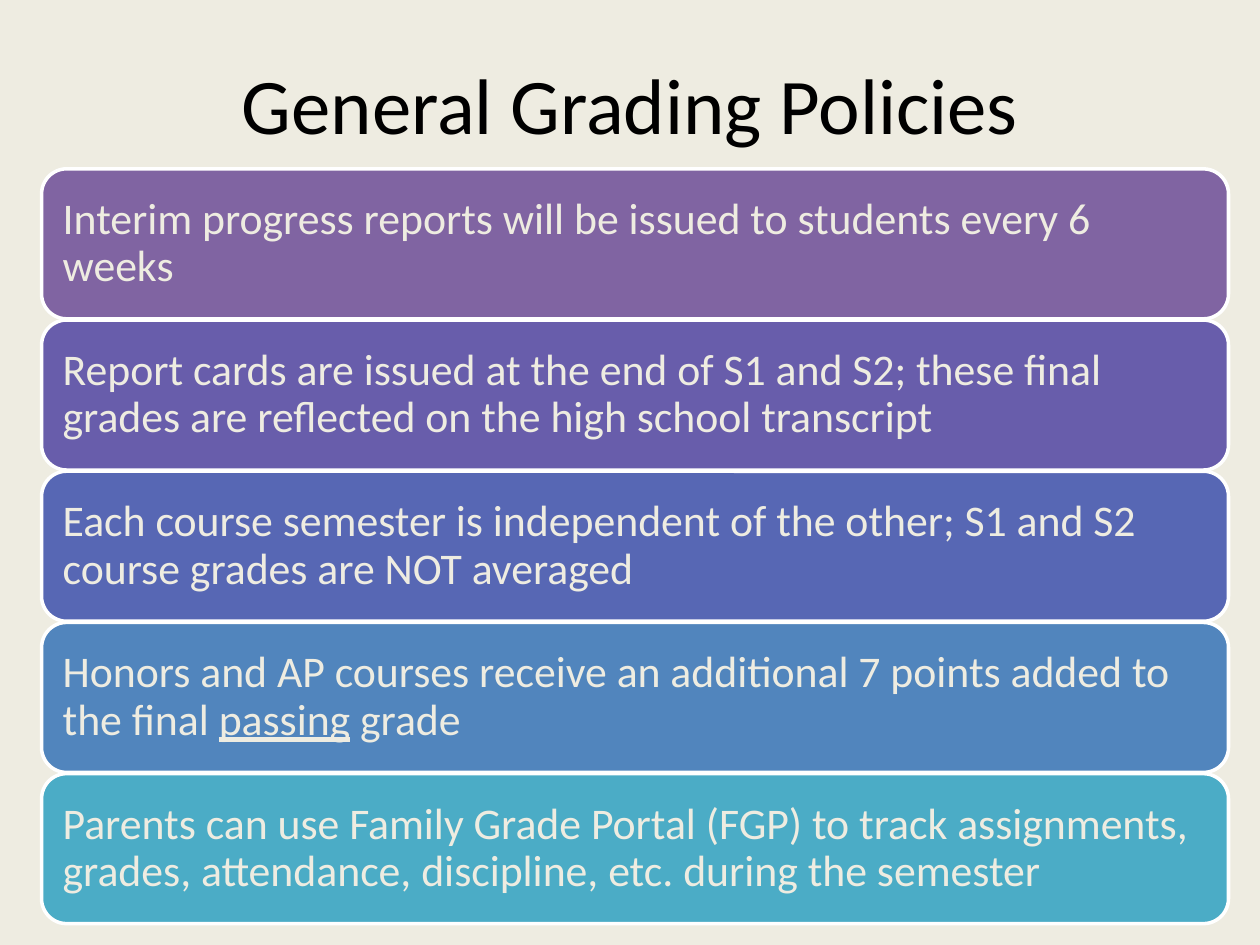
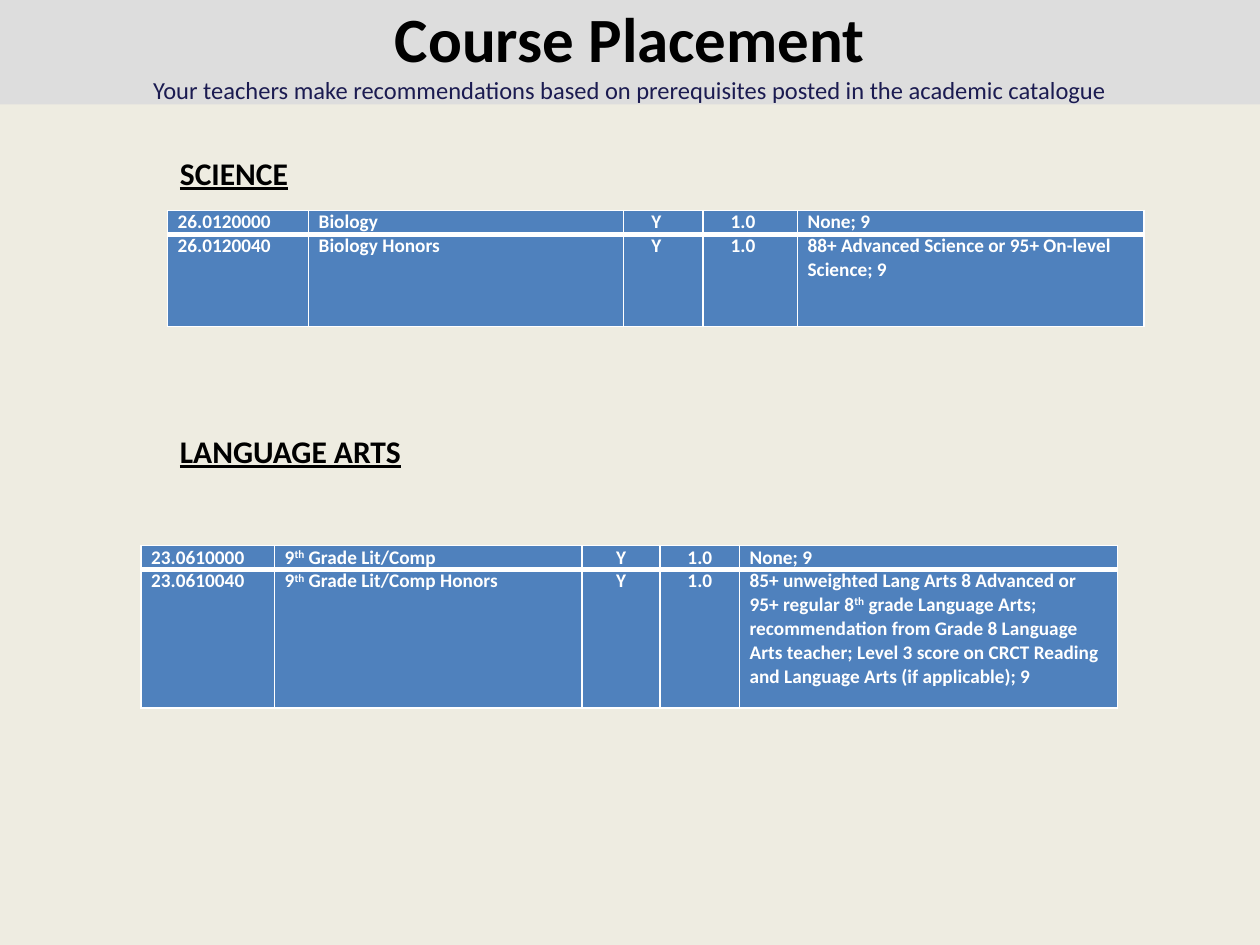
from lxml import etree
from pptx import Presentation
from pptx import util as u
from pptx.dml.color import RGBColor
from pptx.enum import shapes, text
from pptx.oxml.ns import qn

FONT = "Calibri"
HUES = {
    "paper": "EEECE1", "ink": "000000", "white": "FFFFFF", "band": "DDDDDD",
    "navy": "1B1B51", "cell": "4F81BD",
}
BARS = [
    ("8064A2", "Interim progress reports will be issued to students every 6 weeks"),
    ("685DAB", "Report cards are issued at the end of S1 and S2; these final grades "
               "are reflected on the high school transcript"),
    ("5767B4", "Each course semester is independent of the other; S1 and S2 course "
               "grades are NOT averaged"),
    ("5185BD", "Honors and AP courses receive an additional 7 points added to the "
               "final |passing| grade"),
    ("4BACC6", "Parents can use Family Grade Portal (FGP) to track assignments, "
               "grades, attendance, discipline, etc. during the semester"),
]
SCIENCE = [
    ["26.0120000", "Biology", "Y", "1.0", "None; 9"],
    ["26.0120040", "Biology Honors", "Y", "1.0",
     "88+ Advanced Science or 95+ On-level Science; 9"],
]
ARTS = [
    ["23.0610000", "9|th| Grade Lit/Comp", "Y", "1.0", "None; 9"],
    ["23.0610040", "9|th| Grade Lit/Comp Honors", "Y", "1.0",
     "85+ unweighted Lang Arts 8 Advanced or 95+ regular 8|th| grade Language "
     "Arts; recommendation from Grade 8 Language Arts teacher; Level 3 score on "
     "CRCT Reading and Language Arts (if applicable); 9"],
]


def inches(*sizes):
    return [u.Inches(size) for size in sizes]


def tint(name):
    return RGBColor.from_string(HUES.get(name, name))


def paint(fill, name):
    fill.solid()
    fill.fore_color.rgb = tint(name)


def under(run):
    run.font.underline = True


def lift(run):
    run.font._element.set("baseline", "30000")


def write(para, words, size, hue, bold=False, align="LEFT", mark=None):
    for i, part in enumerate(words.split("|")):
        run = para.add_run()
        run.text = part
        if i % 2:
            mark(run)
    font = para.font
    font.name, font.size, font.bold = FONT, u.Pt(size), bold
    font.color.rgb = tint(hue)
    para.alignment = getattr(text.PP_ALIGN, align)


def add_slide(deck):
    slide = deck.slides.add_slide(deck.slide_layouts[6])
    paint(slide.background.fill, "paper")
    return slide


def add_label(slide, box, words, size, wrap=True, **style):
    frame = slide.shapes.add_textbox(*inches(*box)).text_frame
    frame.word_wrap = wrap
    write(frame.paragraphs[0], words, size, "ink", **style)
    return frame


def add_block(slide, kind, box, hue):
    block = slide.shapes.add_shape(kind, *inches(*box))
    block.shadow.inherit = False
    paint(block.fill, hue)
    block.line.fill.background()
    block.text_frame.vertical_anchor = text.MSO_ANCHOR.MIDDLE
    return block


def add_bars(slide, box, bars, gap=0.01):
    left, top, width, height = box
    step = (height + gap) / len(bars)
    for i, (hue, words) in enumerate(bars):
        bar = add_block(slide, shapes.MSO_SHAPE.ROUNDED_RECTANGLE,
                        (left, top + i * step, width, step - gap), hue)
        paint(bar.line.fill, "white")
        bar.line.width = u.Pt(2)
        frame = bar.text_frame
        frame.word_wrap = True
        frame.margin_left = frame.margin_right = u.Inches(0.11)
        frame.margin_top = frame.margin_bottom = u.Inches(0.1)
        para = frame.paragraphs[0]
        para.line_spacing = 0.9
        write(para, words, 25, "paper", mark=under)


def add_header(slide, box, title, note):
    band = add_block(slide, shapes.MSO_SHAPE.RECTANGLE, box, "band")
    frame = band.text_frame
    frame.word_wrap = False
    write(frame.paragraphs[0], title, 36, "ink", bold=True, align="CENTER")
    write(frame.add_paragraph(), note, 14, "navy", align="CENTER")


def add_edges(cell, widths):
    props = cell._tc.get_or_add_tcPr()
    for i, (side, width) in enumerate(widths.items()):
        line = etree.Element(qn("a:ln" + side), w=str(u.Pt(width)))
        fill = etree.SubElement(line, qn("a:solidFill"))
        etree.SubElement(fill, qn("a:srgbClr"), val=HUES["white"])
        props.insert(i, line)


def add_courses(slide, spot, rows, cols, highs, align="LEFT", indent=0):
    box = (*spot, sum(cols), sum(highs))
    table = slide.shapes.add_table(len(rows), len(cols), *inches(*box)).table
    table.first_row = table.horz_banding = False
    for col, width in zip(table.columns, cols):
        col.width = u.Inches(width)
    for r, (row, high) in enumerate(zip(rows, highs)):
        table.rows[r].height = u.Inches(high)
        for c, words in enumerate(row):
            short = c in (2, 3)
            cell = table.cell(r, c)
            paint(cell.fill, "cell")
            cell.margin_left = u.Inches(0.08 + indent * short)
            cell.margin_right = u.Inches(0.08)
            cell.margin_top = cell.margin_bottom = 0
            add_edges(cell, {"L": 1, "R": 1, "T": 3 if r else 1, "B": 1 if r else 3})
            write(cell.text_frame.paragraphs[0], words, 11, "white", bold=True,
                  align=align if short else "LEFT", mark=lift)


def add_heading(slide, box, words):
    frame = add_label(slide, box, words, 18, wrap=False, bold=True)
    frame.paragraphs[0].font.underline = True


def build_grading(deck):
    slide = add_slide(deck)
    frame = add_label(slide, (0.5, 0.3, 9, 1.03), "General Grading Policies", 45,
                      align="CENTER")
    frame.vertical_anchor = text.MSO_ANCHOR.MIDDLE
    add_bars(slide, (0.33, 1.34, 9.42, 5.99), BARS)


def build_courses(deck):
    slide = add_slide(deck)
    add_header(slide, (0, 0, 10, 0.83), "Course Placement",
               "Your teachers make recommendations based on prerequisites posted "
               "in the academic catalogue")
    add_heading(slide, (1.33, 1.17, 1.07, 0.4), "SCIENCE")
    add_courses(slide, (1.33, 1.67), SCIENCE, (1.12, 2.5, 0.63, 0.75, 2.75),
                (0.19, 0.73), indent=0.14)
    add_heading(slide, (1.33, 3.38, 1.97, 0.4), "LANGUAGE ARTS")
    add_courses(slide, (1.12, 4.33), ARTS, (1.06, 2.44, 0.62, 0.63, 3),
                (0.19, 1.1), align="CENTER")


def main():
    deck = Presentation()
    deck.slide_width, deck.slide_height = inches(10, 7.5)
    build_grading(deck)
    build_courses(deck)
    deck.save("out.pptx")


if __name__ == "__main__":
    main()
